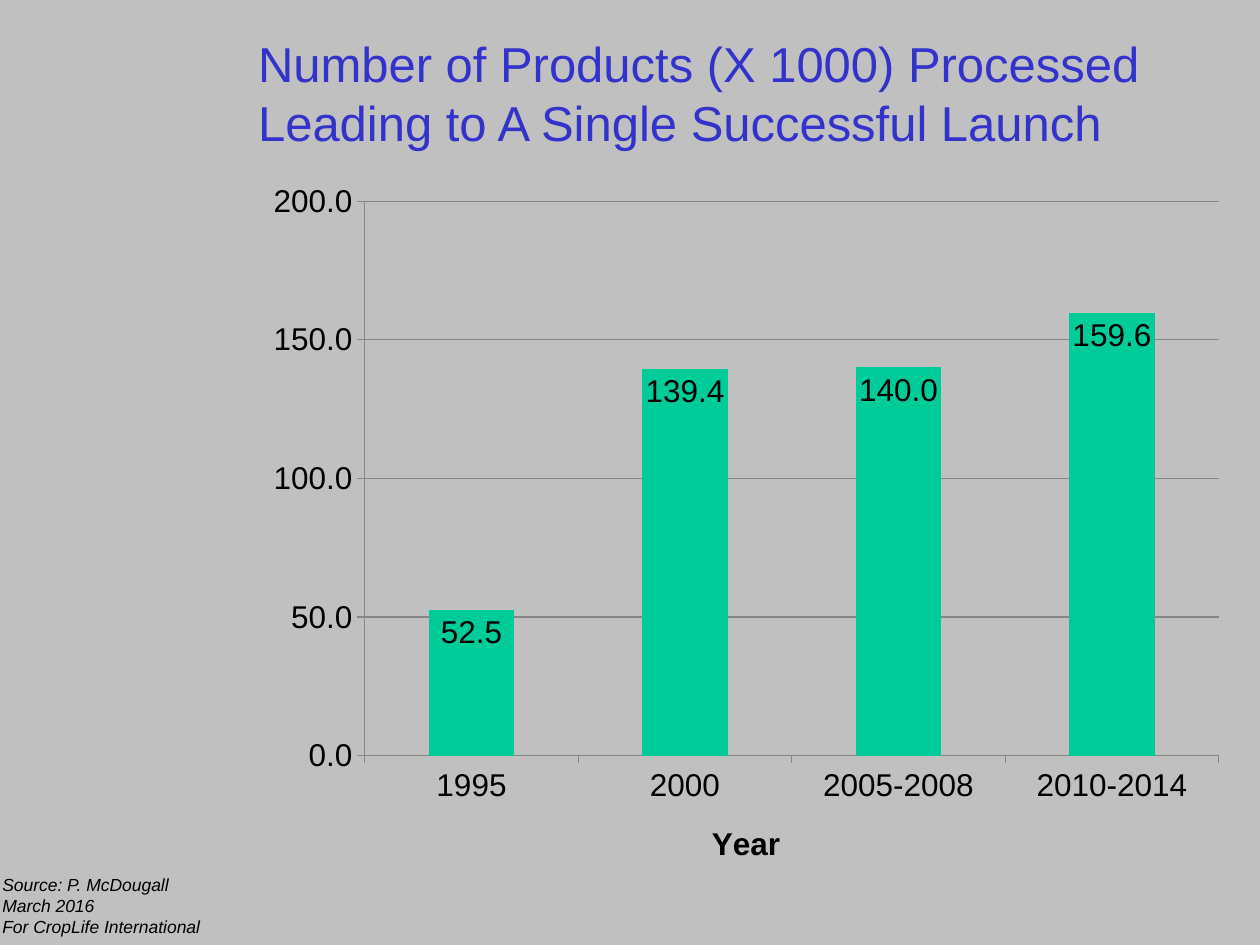
import dataclasses

import lxml.etree
import pptx
import pptx.chart.data
import pptx.dml.color
import pptx.enum.chart
import pptx.enum.text
import pptx.oxml.ns
import pptx.util


@dataclasses.dataclass
class Theme:
    font: str = "Arial"
    background: str = "C0C0C0"
    title: str = "3333CC"
    text: str = "000000"
    bar: str = "00CC99"
    line: str = "868686"
    title_size: int = 28
    chart_size: int = 18
    source_size: int = 10


class SlideBuilder:
    """Places elements on a grid of 100 columns by 75 rows."""

    COLUMNS, ROWS = 100, 75

    def __init__(self, deck, theme):
        self.deck, self.theme = deck, theme
        self.slide = deck.slides.add_slide(deck.slide_layouts[6])
        self.paint(self.slide.background.fill, theme.background)

    def paint(self, fill, color):
        fill.solid()
        fill.fore_color.rgb = pptx.dml.color.RGBColor.from_string(color)

    def place(self, left, top, width, height):
        column = self.deck.slide_width / self.COLUMNS
        row = self.deck.slide_height / self.ROWS
        return [round(n) for n in (left * column, top * row, width * column, height * row)]

    def style(self, font, size, color, bold=False, italic=False):
        font.name, font.size = self.theme.font, pptx.util.Pt(size)
        font.bold, font.italic = bold, italic
        font.color.rgb = pptx.dml.color.RGBColor.from_string(color)

    def text(self, area, lines, size, color, italic=False, wrap=True,
             anchor=pptx.enum.text.MSO_ANCHOR.TOP):
        frame = self.slide.shapes.add_textbox(*self.place(*area)).text_frame
        frame.text = "\n".join(lines)
        frame.word_wrap = wrap
        frame.vertical_anchor = anchor
        for para in frame.paragraphs:
            for span in para.runs:
                self.style(span.font, size, color, italic=italic)

    def column_chart(self, area, categories, values, axis_title, top, step, plot):
        theme = self.theme
        data = pptx.chart.data.CategoryChartData(number_format="0.0")
        data.categories = categories
        data.add_series("Series 1", values)
        chart = self.slide.shapes.add_chart(
            pptx.enum.chart.XL_CHART_TYPE.COLUMN_CLUSTERED, *self.place(*area), data).chart
        chart.has_legend = chart.has_title = False
        self.style(chart.font, theme.chart_size, theme.text)

        # Bars and their labels
        bars = chart.plots[0]
        bars.gap_width, bars.vary_by_categories = 150, False
        self.paint(bars.series[0].format.fill, theme.bar)
        bars.has_data_labels = True
        labels = bars.data_labels
        labels.show_value = True
        labels.position = pptx.enum.chart.XL_LABEL_POSITION.INSIDE_END
        labels.number_format, labels.number_format_is_linked = "0.0", False
        self.style(labels.font, theme.chart_size, theme.text)

        # Axes and gridlines
        years, scale = chart.category_axis, chart.value_axis
        scale.minimum_scale, scale.maximum_scale, scale.major_unit = 0, top, step
        scale.has_major_gridlines = True
        scale.tick_labels.number_format = "0.0"
        scale.tick_labels.number_format_is_linked = False
        for axis in (years, scale):
            axis.major_tick_mark = pptx.enum.chart.XL_TICK_MARK.OUTSIDE
            self.style(axis.tick_labels.font, theme.chart_size, theme.text)
        for line in (years.format.line, scale.format.line, scale.major_gridlines.format.line):
            self.paint(line.fill, theme.line)
            line.width = pptx.util.Pt(0.75)
        title = years.axis_title.text_frame
        title.text = axis_title
        self.style(title.paragraphs[0].runs[0].font, theme.chart_size, theme.text, bold=True)
        self.fix_plot(chart, plot)

    def fix_plot(self, chart, plot):
        """Pin the inner plot area to shares of the chart's size."""
        qn = pptx.oxml.ns.qn
        area = chart.plots[0]._element.getparent()
        for old in area.findall(qn("c:layout")):
            area.remove(old)
        layout = lxml.etree.Element(qn("c:layout"))
        manual = lxml.etree.SubElement(layout, qn("c:manualLayout"))
        settings = [("layoutTarget", "inner"), ("xMode", "edge"), ("yMode", "edge"),
                    *zip("xywh", plot)]
        for name, value in settings:
            lxml.etree.SubElement(manual, qn(f"c:{name}")).set("val", str(value))
        area.insert(0, layout)


def main():
    deck = pptx.Presentation()
    deck.slide_width, deck.slide_height = pptx.util.Inches(10), pptx.util.Inches(7.5)
    theme = Theme()
    page = SlideBuilder(deck, theme)

    # Title
    page.text((19.5, 1.1, 79.7, 12.5),
              ["Number of Products (X 1000) Processed Leading to A Single Successful Launch"],
              theme.title_size, theme.title, anchor=pptx.enum.text.MSO_ANCHOR.MIDDLE)

    # Products processed per launch
    page.column_chart((19.5, 14.3, 78.8, 55.7),
                      ["1995", "2000", "2005-2008", "2010-2014"], [52.5, 139.4, 140, 159.6],
                      "Year", top=200, step=50, plot=(0.12, 0.03, 0.86, 0.79))

    # Source
    page.text((-0.8, 68.9, 18.6, 6.1),
              ["Source: P. McDougall", "March 2016", "For CropLife International"],
              theme.source_size, theme.text, italic=True, wrap=False)

    deck.save("out.pptx")


if __name__ == "__main__":
    main()
